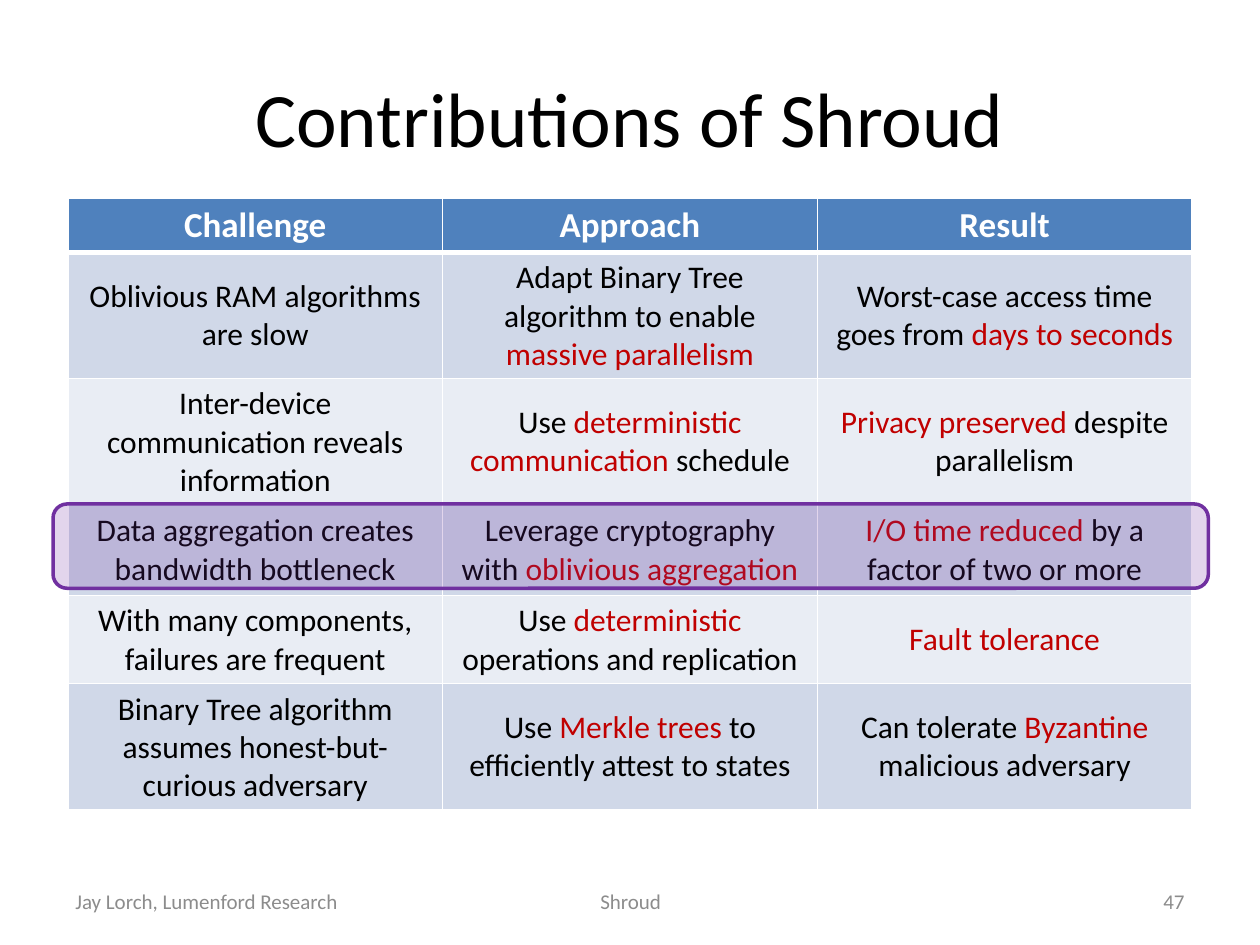
import pptx
import pptx.dml.color
import pptx.enum.shapes
import pptx.enum.text
import pptx.oxml
import pptx.oxml.ns
import pptx.util

Cm, Pt = pptx.util.Cm, pptx.util.Pt
ALIGN = pptx.enum.text.PP_ALIGN
MIDDLE = pptx.enum.text.MSO_ANCHOR.MIDDLE

BLACK, WHITE, GRAY, RED = "000000", "FFFFFF", "8C8C8C", "C00000"
BLUE, BANDS, PURPLE = "4F81BD", ("D0D8E8", "E9EDF4"), "7030A0"

# Text between asterisks is emphasised in red.
ROWS = [
    ("Challenge", "Approach", "Result"),
    ("Oblivious RAM algorithms are slow",
     "Adapt Binary Tree algorithm to enable *massive parallelism*",
     "Worst-case access time goes from *days to seconds*"),
    ("Inter-device communication reveals information",
     "Use *deterministic communication *schedule",
     "*Privacy preserved* despite parallelism"),
    ("Data aggregation creates bandwidth bottleneck",
     "Leverage cryptography with *oblivious aggregation*",
     "*I/O time reduced *by a factor of two or more"),
    ("With many components, failures are frequent",
     "Use *deterministic* operations and replication",
     "*Fault tolerance*"),
    ("Binary Tree algorithm assumes honest-but-curious adversary",
     "Use *Merkle trees* to efficiently attest to states",
     "Can tolerate *Byzantine *malicious adversary"),
]
ROW_HEIGHTS = (1.02, 2.34, 2.34, 1.83, 1.57, 1.63)
FOOTERS = [
    ("Jay Lorch, Lumenford Research", 1.27, 5.92, ALIGN.LEFT),
    ("Shroud", 8.69, 8.05, ALIGN.CENTER),
    ("47", 18.21, 5.92, ALIGN.RIGHT),
]


def rgb(value):
    return pptx.dml.color.RGBColor.from_string(value)


class Deck:
    font = "Calibri"

    def __init__(self, width, height):
        self.prs = pptx.Presentation()
        self.prs.slide_width, self.prs.slide_height = Cm(width), Cm(height)
        self.s = None

    def new_slide(self):
        self.s = self.prs.slides.add_slide(self.prs.slide_layouts[5])

    def add_text(self, tf, text, size, color, align=ALIGN.CENTER, bold=False):
        """Fill a text frame, colouring the parts between asterisks red."""
        p = tf.paragraphs[0]
        p.alignment = align
        for i, part in enumerate(text.split("*")):
            if part:
                r = p.add_run()
                r.text = part
                style = {"name": self.font, "size": Pt(size), "bold": bold}
                for key, value in style.items():
                    setattr(r.font, key, value)
                r.font.color.rgb = rgb(RED if i % 2 else color)

    def title(self, text, x, y, w, h):
        sp = self.s.shapes.title
        box = {"left": x, "top": y, "width": w, "height": h}
        for key, value in box.items():
            setattr(sp, key, Cm(value))
        sp.text_frame.vertical_anchor = MIDDLE
        self.add_text(sp.text_frame, text, 44, BLACK)

    def footer(self, text, x, w, align):
        sp = self.s.shapes.add_textbox(Cm(x), Cm(17.65), Cm(w), Cm(1.02))
        tf = sp.text_frame
        tf.word_wrap = True
        tf.vertical_anchor = MIDDLE
        self.add_text(tf, text, 12, GRAY, align)

    def borders(self, cell, bottom):
        """Draw white cell borders, with the bottom one at its own width."""
        tc_pr = cell._tc.get_or_add_tcPr()
        widths = {"lnL": 1, "lnR": 1, "lnT": 1, "lnB": bottom}
        for i, (tag, width) in enumerate(widths.items()):
            tc_pr.insert(i, pptx.oxml.parse_xml(
                f'<a:{tag} {pptx.oxml.ns.nsdecls("a")} w="{Pt(width)}">'
                f'<a:solidFill><a:srgbClr val="{WHITE}"/></a:solidFill></a:{tag}>'))

    def table(self, rows, heights, x, y, w, h):
        frame = self.s.shapes.add_table(
            len(rows), len(rows[0]), Cm(x), Cm(y), Cm(w), Cm(h))
        table = frame.table
        for i, (texts, height) in enumerate(zip(rows, heights)):
            table.rows[i].height = Cm(height)
            header = i == 0
            for j, text in enumerate(texts):
                cell = table.cell(i, j)
                cell.vertical_anchor = MIDDLE
                cell.fill.solid()
                cell.fill.fore_color.rgb = rgb(BLUE if header else BANDS[(i - 1) % 2])
                self.borders(cell, 3 if header else 1)
                self.add_text(cell.text_frame, text, 20 if header else 18,
                              WHITE if header else BLACK, bold=header)
        frame.height = Cm(h)

    def highlight(self, color, opacity, x, y, w, h):
        sp = self.s.shapes.add_shape(
            pptx.enum.shapes.MSO_SHAPE.ROUNDED_RECTANGLE, Cm(x), Cm(y), Cm(w), Cm(h))
        sp.shadow.inherit = False
        sp.fill.solid()
        sp.fill.fore_color.rgb = rgb(color)
        clr = sp._element.spPr.find(".//" + pptx.oxml.ns.qn("a:srgbClr"))
        clr.append(pptx.oxml.parse_xml(
            f'<a:alpha {pptx.oxml.ns.nsdecls("a")} val="{opacity * 1000}"/>'))
        sp.line.color.rgb = rgb(color)
        sp.line.width = Pt(2)


def main():
    deck = Deck(25.4, 19.05)
    deck.new_slide()
    deck.title("Contributions of Shroud", 1.27, 0.76, 22.86, 3.18)
    for footer in FOOTERS:
        deck.footer(*footer)
    deck.table(ROWS, ROW_HEIGHTS, 1.37, 3.99, 22.66, 12.32)
    deck.highlight(PURPLE, 20, 1.07, 10.16, 23.29, 1.7)
    deck.prs.save("out.pptx")


if __name__ == "__main__":
    main()
